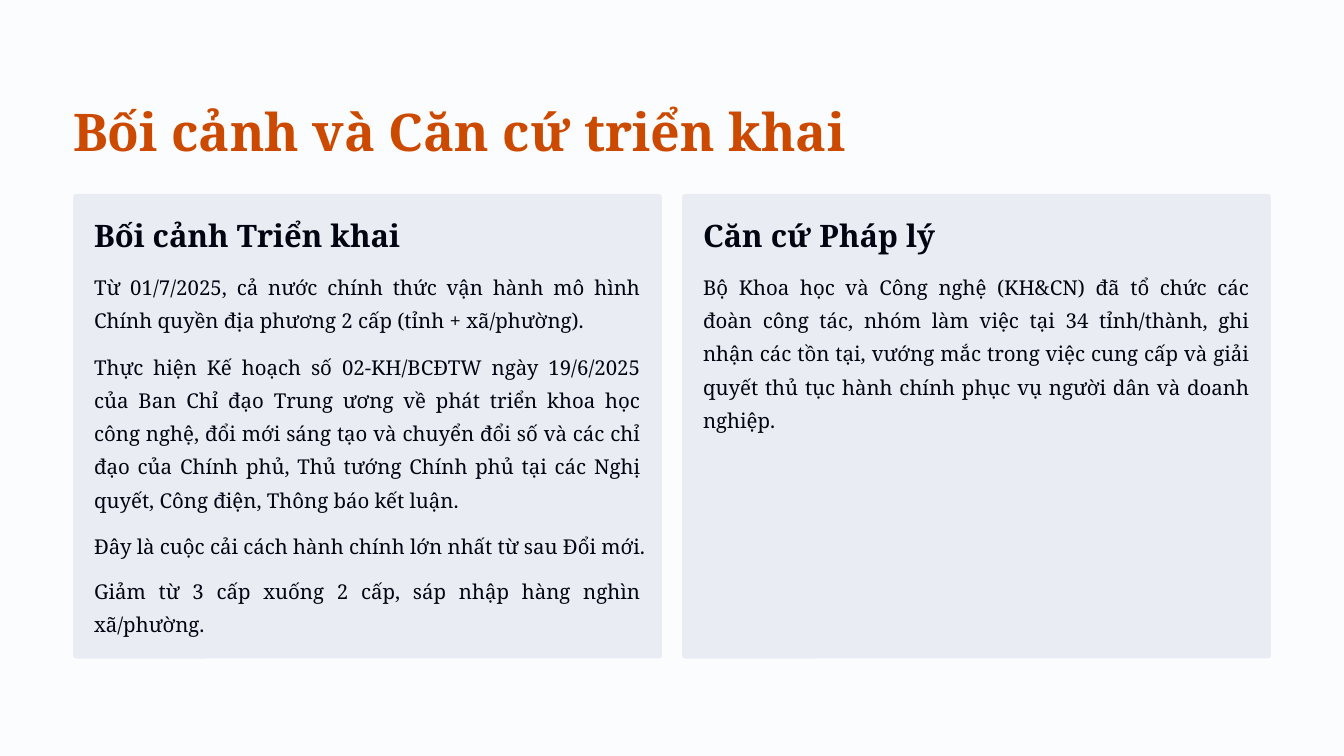
from dataclasses import dataclass

from pptx import Presentation
from pptx.dml.color import RGBColor
from pptx.enum.shapes import MSO_SHAPE as Preset
from pptx.enum.text import MSO_ANCHOR as Anchor, MSO_AUTO_SIZE as AutoSize, PP_ALIGN as Align
from pptx.util import Inches, Pt

COLORS = {"background": "FBFCFE", "title": "CC4900", "card": "E9ECF2", "ink": "010511"}
FONT = "Noto Serif"
CARD_TOP, CARD_WIDTH, CARD_HEIGHT = 2.31, 7.01, 5.53
PADDING = 0.25
BODY_WIDTH = 6.51


@dataclass(frozen=True)
class TextStyle:
    size: float
    spacing: float
    color: str
    bold: bool = False
    align: Align = Align.LEFT


@dataclass(frozen=True)
class Passage:
    top: float
    height: float
    text: str
    wrap: bool = True


@dataclass(frozen=True)
class Card:
    left: float
    heading: str
    passages: tuple[Passage, ...]


TITLE = TextStyle(44.5, 55.5, "title", bold=True)
HEADING = TextStyle(26.5, 33, "ink", bold=True)
BODY = TextStyle(17.5, 28.5, "ink", align=Align.JUSTIFY)

CARDS = (
    Card(0.87, "Bối cảnh Triển khai", (
        Passage(3.17, 0.79, "Từ 01/7/2025, cả nước chính thức vận hành mô hình "
                "Chính quyền địa phương 2 cấp (tỉnh + xã/phường)."),
        Passage(4.12, 1.98, "Thực hiện Kế hoạch số 02-KH/BCĐTW ngày 19/6/2025 "
                "của Ban Chỉ đạo Trung ương về phát triển khoa học công nghệ, "
                "đổi mới sáng tạo và chuyển đổi số và các chỉ đạo của Chính phủ, "
                "Thủ tướng Chính phủ tại các Nghị quyết, Công điện, "
                "Thông báo kết luận."),
        Passage(6.25, 0.4, "Đây là cuộc cải cách hành chính lớn nhất từ sau Đổi mới.",
                wrap=False),
        Passage(6.79, 0.79, "Giảm từ 3 cấp xuống 2 cấp, sáp nhập hàng nghìn xã/phường."),
    )),
    Card(8.12, "Căn cứ Pháp lý", (
        Passage(3.17, 1.59, "Bộ Khoa học và Công nghệ (KH&CN) đã tổ chức các đoàn công tác, "
                "nhóm làm việc tại 34 tỉnh/thành, ghi nhận các tồn tại, "
                "vướng mắc trong việc cung cấp và giải quyết thủ tục hành chính "
                "phục vụ người dân và doanh nghiệp."),
    )),
)


def rgb(name: str) -> RGBColor:
    return RGBColor.from_string(COLORS[name])


def write(box, text: str, style: TextStyle, wrap: bool) -> None:
    frame = box.text_frame
    frame.margin_left = frame.margin_top = frame.margin_right = frame.margin_bottom = 0
    frame.auto_size = AutoSize.NONE
    frame.vertical_anchor = Anchor.TOP
    frame.word_wrap = wrap
    para = frame.paragraphs[0]
    para.alignment = style.align
    para.line_spacing = Pt(style.spacing)
    para.space_before = Pt(0)
    span = para.add_run()
    span.text = text
    font = span.font
    font.name, font.size, font.bold = FONT, Pt(style.size), style.bold
    font.color.rgb = rgb(style.color)


def add_title(page, text: str) -> None:
    # Wide enough to keep the title on one line
    title = page.shapes.title
    title.left, title.top = Inches(0.87), Inches(1.16)
    title.width, title.height = Inches(9.6), Inches(0.78)
    write(title, text, TITLE, wrap=True)


def add_card(page, card: Card) -> None:
    panel = page.shapes.add_shape(Preset.ROUNDED_RECTANGLE, Inches(card.left), Inches(CARD_TOP),
                                  Inches(CARD_WIDTH), Inches(CARD_HEIGHT))
    panel.adjustments[0] = 0.007
    panel.shadow.inherit = False
    panel.fill.solid()
    panel.fill.fore_color.rgb = rgb("card")
    panel.line.fill.background()

    text_left = Inches(card.left + PADDING)
    heading = page.shapes.add_textbox(text_left, Inches(CARD_TOP + PADDING),
                                      Inches(3.72), Inches(0.47))
    write(heading, card.heading, HEADING, wrap=False)
    for passage in card.passages:
        box = page.shapes.add_textbox(text_left, Inches(passage.top),
                                      Inches(BODY_WIDTH), Inches(passage.height))
        write(box, passage.text, BODY, passage.wrap)


def main() -> None:
    deck = Presentation()
    deck.slide_width, deck.slide_height = Inches(16), Inches(9)
    page = deck.slides.add_slide(deck.slide_layouts.get_by_name("Title Only"))

    # Background and title
    page.background.fill.solid()
    page.background.fill.fore_color.rgb = rgb("background")
    add_title(page, "Bối cảnh và Căn cứ triển khai")

    # Two cards side by side
    for card in CARDS:
        add_card(page, card)
    deck.save("out.pptx")


if __name__ == "__main__":
    main()
